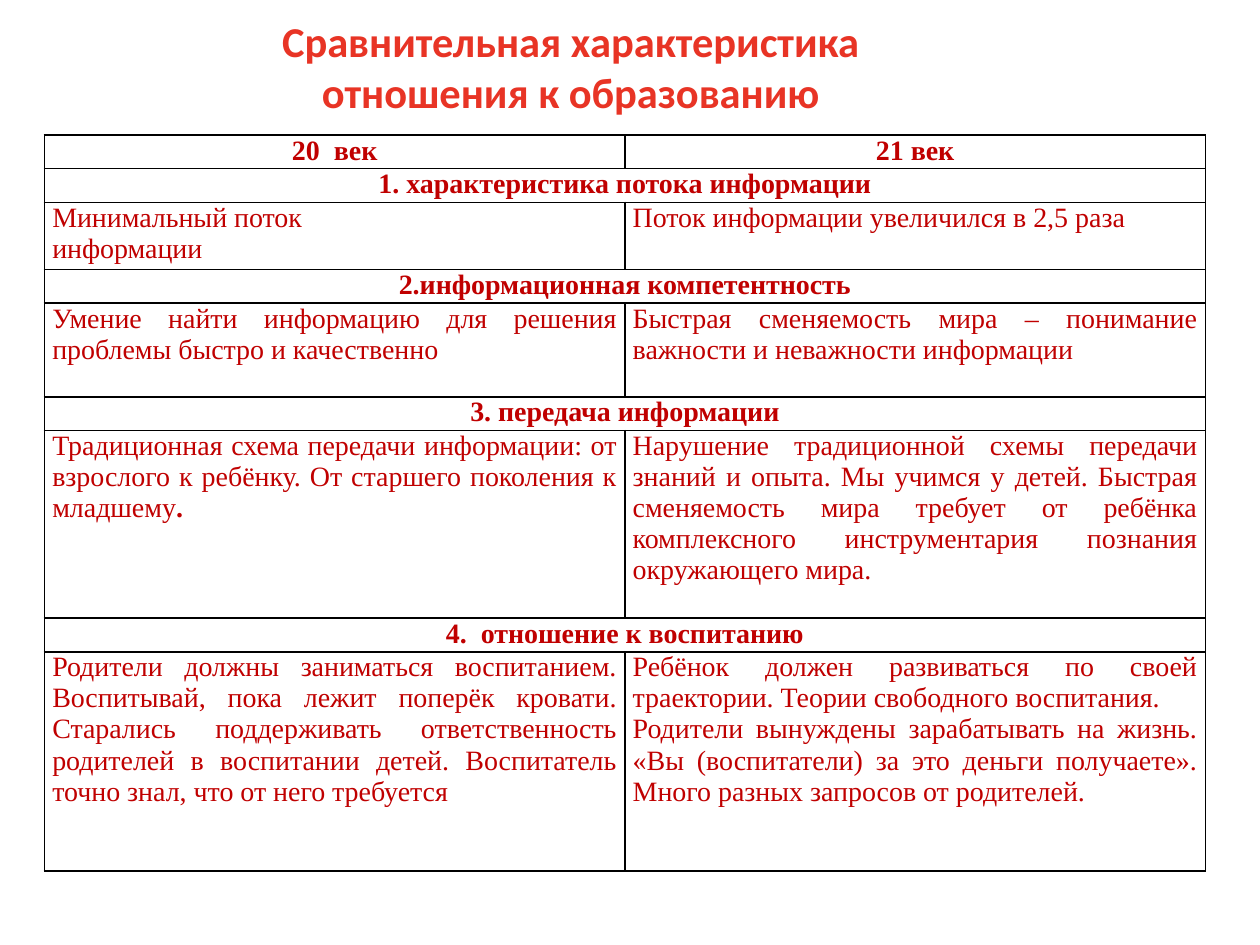
from lxml import etree
from pptx import Presentation
from pptx.dml.color import RGBColor
from pptx.enum.text import MSO_ANCHOR, PP_ALIGN
from pptx.oxml import parse_xml
from pptx.util import Pt

CENTER, JUSTIFY = PP_ALIGN.CENTER, PP_ALIGN.JUSTIFY
BOTTOM = MSO_ANCHOR.BOTTOM
DRAWING_NS = "http://schemas.openxmlformats.org/drawingml/2006/main"

THEME = {
    "title": {"name": "Calibri", "size": Pt(24.3), "bold": True, "color": "E83425"},
    "heading": {"name": "Times New Roman", "size": Pt(16), "bold": True, "color": "C00000"},
    "body": {"name": "Times New Roman", "size": Pt(16), "bold": False, "color": "C00000"},
    "border": "000000",
}

ROWS = [
    (18.6, "heading", [["20  век"], ["21 век"]]),
    (18.6, "heading", [["1. характеристика потока информации"]]),
    (37.2, "body", [
        ["Минимальный поток", "информации"],
        ["Поток информации увеличился в 2,5 раза"],
    ]),
    (18.6, "heading", [["2.информационная компетентность"]]),
    (53.6, "body", [
        ["Умение найти информацию для решения проблемы быстро и качественно"],
        ["Быстрая сменяемость мира – понимание важности и неважности информации"],
    ]),
    (18.6, "heading", [["3. передача информации"]]),
    (107.2, "body", [
        ["Традиционная схема передачи информации: от взрослого к ребёнку. "
         "От старшего поколения к младшему"],
        ["Нарушение традиционной схемы передачи знаний и опыта. Мы учимся у детей. "
         "Быстрая сменяемость мира требует от ребёнка комплексного инструментария "
         "познания окружающего мира."],
    ]),
    (18.6, "heading", [["4.  отношение к воспитанию"]]),
    (125.2, "body", [
        ["Родители должны заниматься воспитанием. Воспитывай, пока лежит поперёк кровати. "
         "Старались поддерживать ответственность родителей в воспитании детей. "
         "Воспитатель точно знал, что от него требуется"],
        ["Ребёнок должен развиваться по своей траектории. Теории свободного воспитания.",
         "Родители вынуждены зарабатывать на жизнь. «Вы (воспитатели) за это деньги "
         "получаете». Много разных запросов от родителей."],
    ]),
]
TRANSMISSION_ROW = 6


def apply_font(font, style):
    for key, value in THEME[style].items():
        if key == "color":
            font.color.rgb = RGBColor.from_string(value)
        else:
            setattr(font, key, value)


def add_borders(cell):
    properties = cell._tc.get_or_add_tcPr()
    for position, side in enumerate(("lnL", "lnR", "lnT", "lnB")):
        line = parse_xml(f'<a:{side} xmlns:a="{DRAWING_NS}" w="{Pt(1)}"/>')
        fill = etree.SubElement(line, f"{{{DRAWING_NS}}}solidFill")
        etree.SubElement(fill, f"{{{DRAWING_NS}}}srgbClr", val=THEME["border"])
        properties.insert(position, line)


presentation = Presentation()
presentation.slide_width, presentation.slide_height = Pt(720), Pt(540)
slide = presentation.slides.add_slide(presentation.slide_layouts[6])

title = slide.shapes.add_textbox(Pt(14.4), Pt(43.2), Pt(623.5), Pt(23.5)).text_frame
title_format = {"word_wrap": True, "vertical_anchor": BOTTOM, "margin_top": 0, "margin_bottom": 0}
for key, value in title_format.items():
    setattr(title, key, value)
title.text = "Сравнительная характеристика\vотношения к образованию"
title.paragraphs[0].alignment = CENTER
for run in title.paragraphs[0].runs:
    apply_font(run.font, "title")

table_height = sum(height for height, _, _ in ROWS)
comparison = slide.shapes.add_table(
    len(ROWS), 2, Pt(25.4), Pt(77.2), Pt(663.4), Pt(table_height)
).table
comparison.first_row = comparison.horz_banding = False
cell_format = {"margin_left": Pt(4.5), "margin_right": Pt(4.5), "margin_top": 0, "margin_bottom": 0}

for row_index, (height, style, texts) in enumerate(ROWS):
    comparison.rows[row_index].height = Pt(height)
    for column in range(2):
        cell = comparison.cell(row_index, column)
        cell.fill.background()
        add_borders(cell)
        for key, value in cell_format.items():
            setattr(cell, key, value)
        apply_font(cell.text_frame.paragraphs[0].font, style)
    if len(texts) == 1:
        comparison.cell(row_index, 0).merge(comparison.cell(row_index, 1))
    for column, paragraphs in enumerate(texts):
        cell = comparison.cell(row_index, column)
        cell.text = "\n".join(paragraphs)
        for paragraph in cell.text_frame.paragraphs:
            paragraph.alignment = CENTER if style == "heading" else JUSTIFY
            apply_font(paragraph.runs[0].font, style)

full_stop = comparison.cell(TRANSMISSION_ROW, 0).text_frame.paragraphs[0].add_run()
full_stop.text = "."
apply_font(full_stop.font, "heading")

presentation.save("out.pptx")
